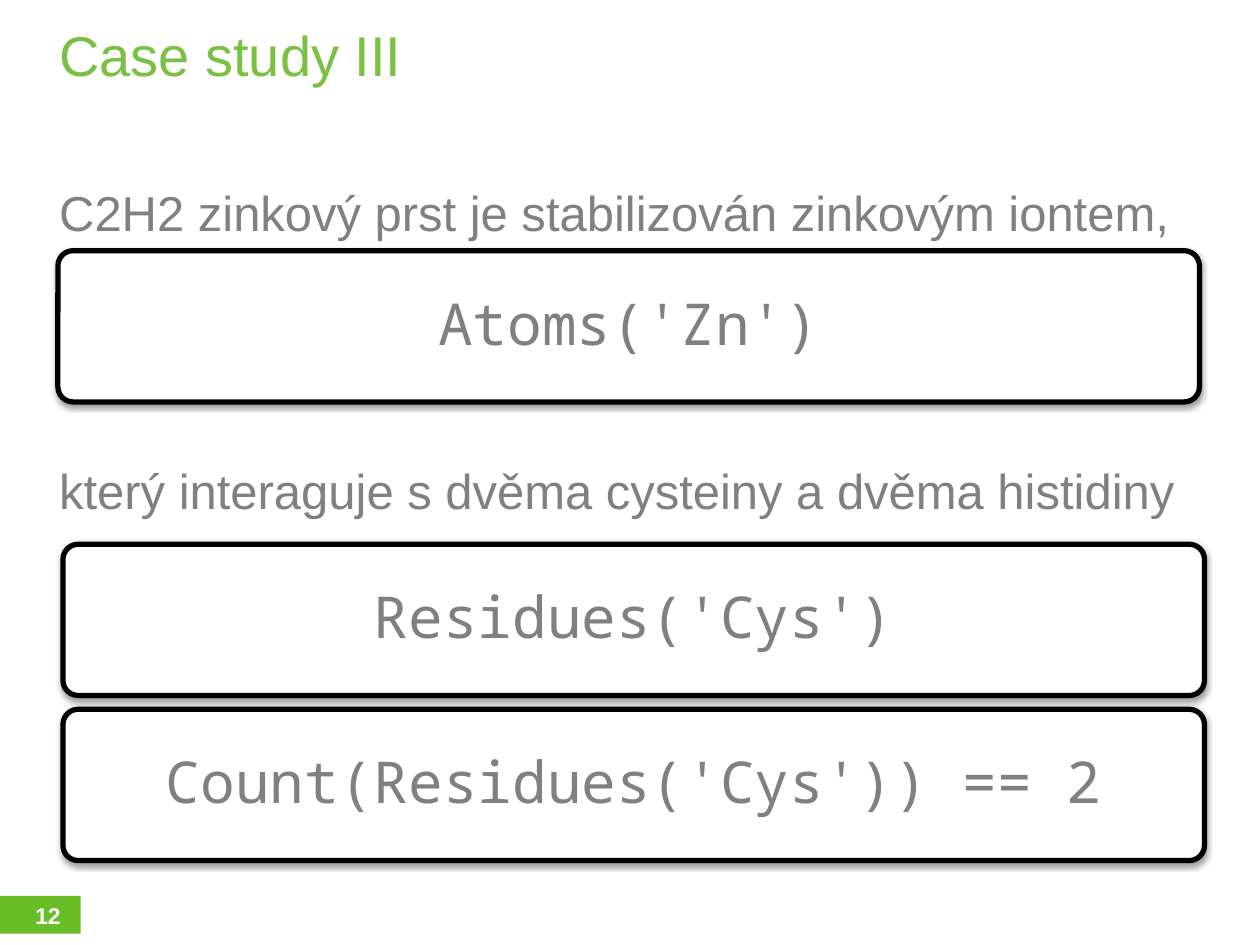
from lxml import etree
from pptx import Presentation
from pptx.dml.color import RGBColor
from pptx.enum.shapes import MSO_SHAPE
from pptx.enum.text import MSO_ANCHOR, PP_ALIGN
from pptx.oxml.ns import qn
from pptx.util import Inches, Pt

RECT, ROUNDED = MSO_SHAPE.RECTANGLE, MSO_SHAPE.ROUNDED_RECTANGLE
LEFT, CENTER, RIGHT = PP_ALIGN.LEFT, PP_ALIGN.CENTER, PP_ALIGN.RIGHT
TOP, MIDDLE, BOTTOM = MSO_ANCHOR.TOP, MSO_ANCHOR.MIDDLE, MSO_ANCHOR.BOTTOM

WHITE = RGBColor(0xFF, 0xFF, 0xFF)
BLACK = RGBColor(0x00, 0x00, 0x00)
GRAY = RGBColor(0x80, 0x80, 0x80)
TITLE_GREEN = RGBColor(0x7A, 0xC1, 0x43)
BADGE_GREEN = RGBColor(0x69, 0xBE, 0x28)


class CaseStudySlide:
    text_font = "Arial"
    code_font = "Noto Sans Mono"

    def __init__(self, slide):
        self.slide = slide

    def fill_frame(self, frame, lines, font, size, color, align=LEFT,
                   anchor=TOP, margin=0, spacing=1.0, gap=0, bold=False):
        frame.word_wrap = True
        frame.vertical_anchor = anchor
        frame.margin_left = frame.margin_right = Inches(margin)
        frame.margin_top = frame.margin_bottom = Inches(margin)
        for index, line in enumerate(lines):
            paragraph = frame.add_paragraph() if index else frame.paragraphs[0]
            paragraph.text = line
            paragraph.alignment = align
            paragraph.line_spacing = spacing
            if index:
                paragraph.space_before = Pt(gap)
            paragraph.font.name = font
            paragraph.font.size = Pt(size)
            paragraph.font.color.rgb = color
            paragraph.font.bold = bold

    def text(self, left, top, width, height, lines, size, color, **layout):
        box = self.slide.shapes.add_textbox(
            Inches(left), Inches(top), Inches(width), Inches(height))
        self.fill_frame(box.text_frame, lines, self.text_font, size, color, **layout)

    def panel(self, kind, left, top, width, height, fill):
        panel = self.slide.shapes.add_shape(
            kind, Inches(left), Inches(top), Inches(width), Inches(height))
        panel.shadow.inherit = False
        panel.fill.solid()
        panel.fill.fore_color.rgb = fill
        panel.line.fill.background()
        return panel

    def code_box(self, left, top, code):
        box = self.panel(ROUNDED, left, top, 9.06, 1.2, WHITE)
        box.adjustments[0] = 0.1
        box.line.color.rgb = BLACK
        box.line.width = Pt(3)
        self.drop_shadow(box)
        self.fill_frame(box.text_frame, [code], self.code_font, 33, GRAY,
                        align=CENTER, anchor=MIDDLE, margin=0.14, spacing=0.9)

    def drop_shadow(self, shape):
        effects = shape._element.spPr.find(qn("a:effectLst"))
        shadow = etree.SubElement(
            effects, qn("a:outerShdw"), blurRad=str(Pt(3.1)),
            dist=str(Pt(1.6)), dir="5400000", rotWithShape="0")
        color = etree.SubElement(shadow, qn("a:srgbClr"), val=str(BLACK))
        etree.SubElement(color, qn("a:alpha"), val="38000")


def main():
    deck = Presentation()
    deck.slide_width, deck.slide_height = Inches(10), Inches(7.5)
    page = CaseStudySlide(deck.slides.add_slide(deck.slide_layouts[6]))

    # Page number badge
    page.panel(RECT, 0, 7.11, 0.64, 0.3, BADGE_GREEN)
    page.text(-1.09, 7.02, 1.57, 0.35, ["12"], 13, WHITE,
              align=RIGHT, anchor=BOTTOM, bold=True)

    # Title and explanation, with room for the first code box between the lines
    page.text(0.47, 0.22, 9.05, 0.87, ["Case study III"], 32, TITLE_GREEN, spacing=0.9)
    page.text(0.47, 1.45, 9.06, 5.19,
              ["C2H2 zinkový prst je stabilizován zinkovým iontem,",
               "který interaguje s dvěma cysteiny a dvěma histidiny"],
              28, GRAY, gap=125)

    # Query code boxes
    for left, top, code in (
        (0.46, 1.99, "Atoms('Zn')"),
        (0.5, 4.32, "Residues('Cys')"),
        (0.5, 5.63, "Count(Residues('Cys')) == 2"),
    ):
        page.code_box(left, top, code)

    deck.save("out.pptx")


if __name__ == "__main__":
    main()
